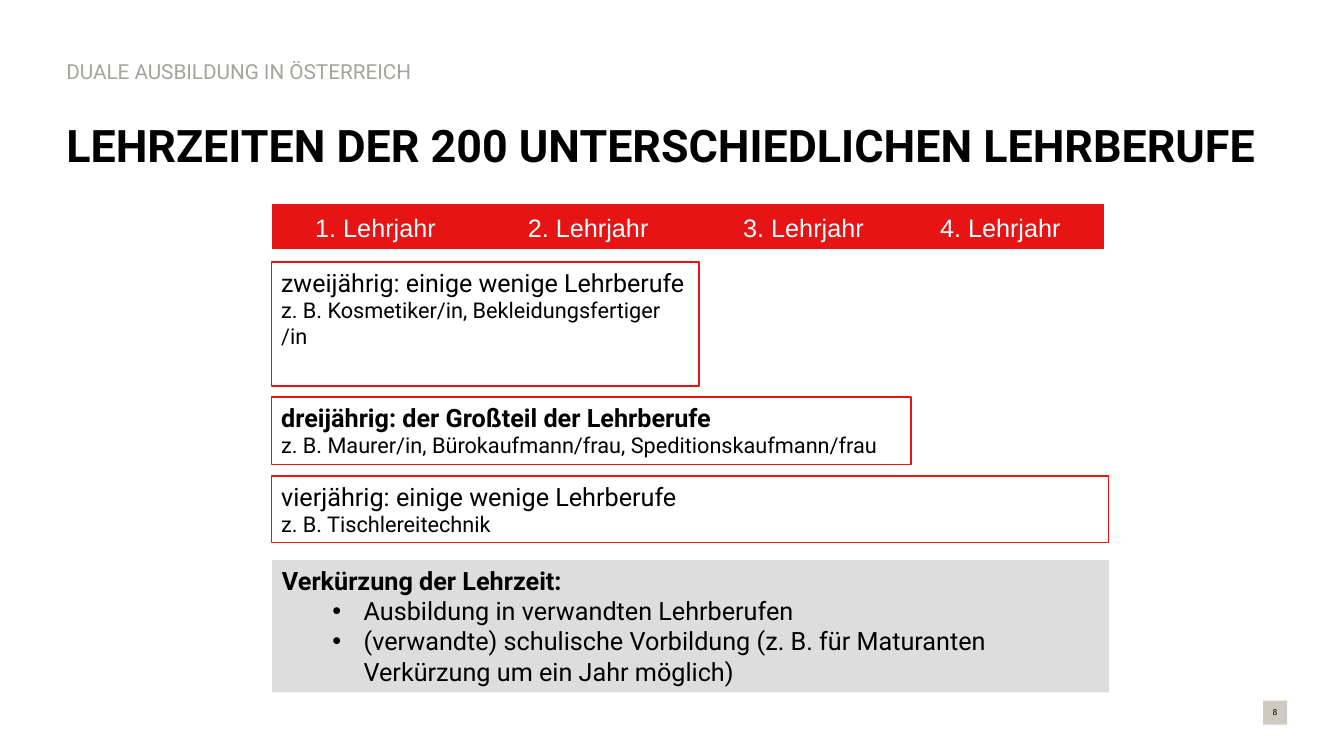
from pptx import Presentation
from pptx.dml.color import RGBColor
from pptx.enum.shapes import MSO_SHAPE
from pptx.enum.text import MSO_ANCHOR, PP_ALIGN
from pptx.oxml.ns import qn
from pptx.util import Inches, Pt
from lxml import etree

RECT, FLOW = MSO_SHAPE.RECTANGLE, MSO_SHAPE.FLOWCHART_PROCESS
TOP, MID = MSO_ANCHOR.TOP, MSO_ANCHOR.MIDDLE
LEFT, MIDDLE = PP_ALIGN.LEFT, PP_ALIGN.CENTER
COLORS = {"red": "E61414", "white": "FFFFFF", "black": "000000",
          "gray": "DDDDDD", "stone": "CECAC2", "muted": "A6A39D"}
WIDTH, HEIGHT = Inches(13.33), Inches(7.5)
PAGE = (0, 0, WIDTH, HEIGHT)
YEARS = (0, 25.4, 51.1, 74.6)
TERMS = (
    (12.14, 51.1, 25.3, 17.9, False, "zweijährig: einige wenige Lehrberufe",
     "z. B. Kosmetiker/in, Bekleidungsfertiger /in"),
    (39.7, 76.4, 13.8, 18, True, "dreijährig: der Großteil der Lehrberufe",
     "z. B. Maurer/in, Bürokaufmann/frau, Speditionskaufmann/frau"),
    (55.8, 100, 13.6, 18, False, "vierjährig: einige wenige Lehrberufe",
     "z. B. Tischlereitechnik"),
)
CUTS = ("Ausbildung in verwandten Lehrberufen",
        "(verwandte) schulische Vorbildung (z. B. für Maturanten Verkürzung um ein Jahr möglich)")


def color(name):
    """Return the named color."""
    return RGBColor.from_string(COLORS[name])


def part(box, x, y, w, h):
    """Return the area at percent shares of a box."""
    left, top, wide, high = box
    return (round(left + wide * x / 100), round(top + high * y / 100),
            round(wide * w / 100), round(high * h / 100))


def block(slide, area, fill, line=None, weight=1, kind=RECT):
    """Draw a filled block and return it."""
    shape = slide.shapes.add_shape(kind, *area)
    shape.shadow.inherit = False
    shape.fill.solid()
    shape.fill.fore_color.rgb = color(fill)
    if line:
        shape.line.color.rgb = color(line)
        shape.line.width = Pt(weight)
    else:
        shape.line.fill.background()
    return shape


def bullet(para):
    """Give a paragraph a hanging bullet."""
    para.level = 1
    props = para._p.get_or_add_pPr()
    props.set("marL", str(Inches(0.81)))
    props.set("indent", str(-Inches(0.31)))
    etree.SubElement(props, qn("a:buFont")).set("typeface", "Arial")
    etree.SubElement(props, qn("a:buChar")).set("char", "•")


def write(shape, lines, tint="black", font="Roboto", align=LEFT, anchor=TOP):
    """Fill a shape with lines of text, size, bold and bullet flags."""
    frame = shape.text_frame
    frame.word_wrap = True
    frame.vertical_anchor = anchor
    for i, (text, size, bold, dot) in enumerate(lines):
        para = frame.add_paragraph() if i else frame.paragraphs[0]
        para.text = text
        para.alignment = align
        if dot:
            bullet(para)
        para.font.name = font
        para.font.size = Pt(size)
        para.font.bold = bold
        para.font.color.rgb = color(tint)
    return frame


def label(slide, area, text, size, bold=False, **style):
    """Add a text box with one line."""
    shape = slide.shapes.add_textbox(*area)
    return write(shape, [(text, size, bold, False)], **style)


def header(slide, box):
    """Place the title and the topic above it."""
    title = label(slide, part(box, 4.2, 11.87, 91.5, 15.47),
                  "LEHRZEITEN DER 200 UNTERSCHIEDLICHEN LEHRBERUFE", 32, True, anchor=MID)
    topic = label(slide, part(box, 4.2, 7.47, 45.75, 4.4),
                  "DUALE AUSBILDUNG IN ÖSTERREICH", 14.8, tint="muted", anchor=MID)
    for frame in (title, topic):
        frame.paragraphs[0].line_spacing = 0.9


def footer(slide, box):
    """Place the page number on its chip."""
    block(slide, part(box, 93.98, 92.67, 1.8, 3.2), "stone")
    label(slide, part(box, 93.4, 91.6, 2.92, 5.2), "8", 6, align=MIDDLE, anchor=MID)


def chart(slide, box):
    """Place the year band, the term bars and the note."""
    block(slide, part(box, 0, 0, 99.5, 9.67), "red", "white", 1.5, FLOW)
    for year, x in enumerate(YEARS, 1):
        label(slide, part(box, x, 1.03, 24.9, 8.23), f"{year}. Lehrjahr", 18,
              tint="white", font="Arial", align=MIDDLE)
    for y, wide, high, size, bold, term, jobs in TERMS:
        bar = block(slide, part(box, 0, y, wide, high), "white", "red")
        write(bar, [(term, size, bold, False), (jobs, 15.5, False, False)])
    note = block(slide, part(box, 0.1, 73, 99.9, 27), "gray")
    write(note, [("Verkürzung der Lehrzeit:", 18, True, False)]
          + [(cut, 18, False, True) for cut in CUTS])


def main():
    """Build and save the slide."""
    deck = Presentation()
    deck.slide_width, deck.slide_height = WIDTH, HEIGHT
    slide = deck.slides.add_slide(deck.slide_layouts[6])
    header(slide, PAGE)
    footer(slide, PAGE)
    chart(slide, part(PAGE, 20.18, 26.8, 62.32, 64.8))
    deck.save("out.pptx")


if __name__ == "__main__":
    main()
